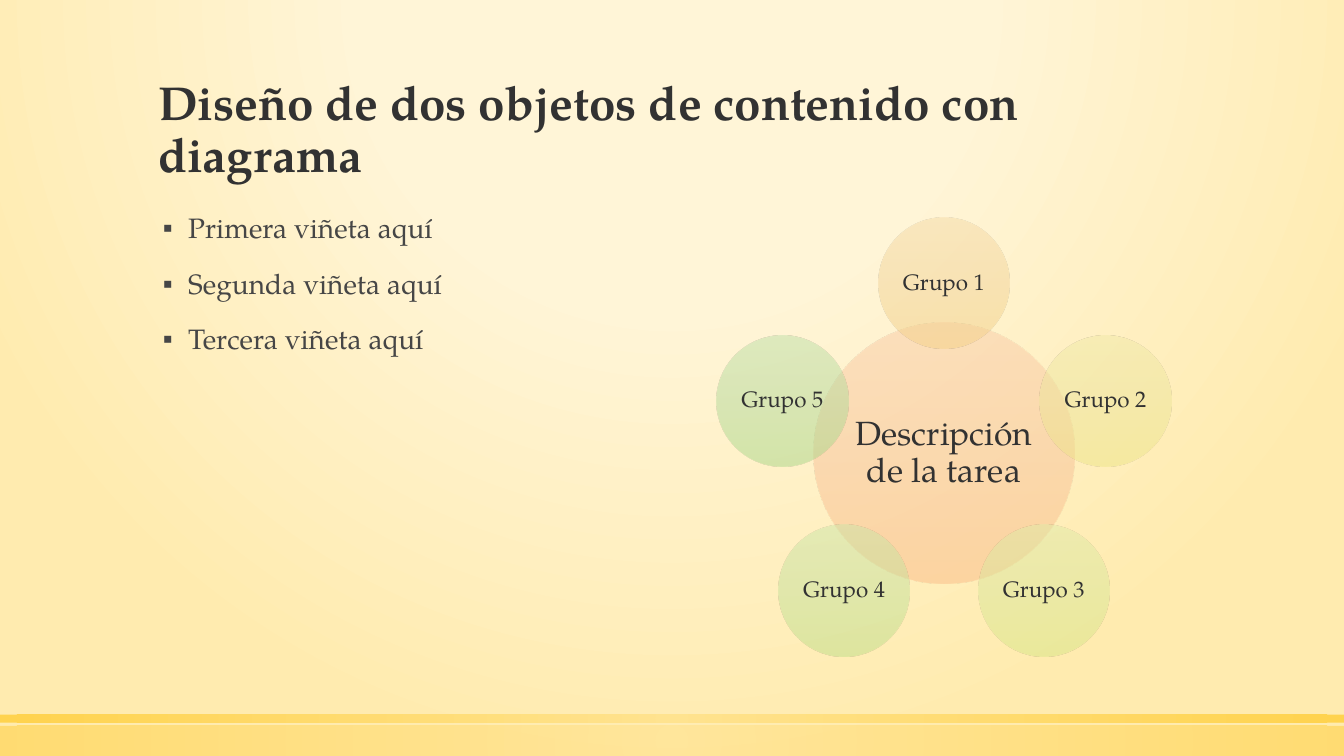
import math
from dataclasses import dataclass

from lxml import etree
from pptx import Presentation
from pptx.dml.color import RGBColor
from pptx.enum import shapes, text
from pptx.oxml import ns
from pptx.util import Cm, Pt

FONT = "TeX Gyre Pagella"
DARK = RGBColor(0x32, 0x32, 0x32)
GREY = RGBColor(0x46, 0x46, 0x46)
CREAM = RGBColor(0xFF, 0xF5, 0xD7)
SAND = RGBColor(0xFF, 0xEB, 0xAF)
YELLOW = RGBColor(0xFF, 0xE1, 0x86)
GOLD = RGBColor(0xFF, 0xCD, 0x36)

SLIDE_W, SLIDE_H = 33.87, 19.05
CENTER_X, CENTER_Y = 23.79, 11.42
ORBIT = 4.28
HUB_SIZE, GROUP_SIZE = 6.58, 3.3


@dataclass
class Stop:
    pos: int
    color: RGBColor
    alpha: int = 100


@dataclass
class Bar:
    top: float
    height: float
    alpha: int


@dataclass
class Circle:
    label: str
    colors: tuple[str, str, str]


BARS = [Bar(18.29, 0.76, 50), Bar(18.01, 0.2, 80)]
HUB = Circle("Descripción de la tarea", ("FACDA9", "F8C39A", "FBBB87"))
GROUPS = [
    Circle("Grupo 1", ("F6DBA8", "F3D49A", "F5D187")),
    Circle("Grupo 2", ("F1EAA8", "EDE59A", "EEE587")),
    Circle("Grupo 3", ("E0EBA8", "DAE79A", "D8E787")),
    Circle("Grupo 4", ("CDE6A8", "C5E19A", "BEE088")),
    Circle("Grupo 5", ("BFE0A9", "B4DA9B", "A9D889")),
]
BULLETS = ["Primera viñeta aquí", "Segunda viñeta aquí", "Tercera viñeta aquí"]


def add_xml(parent, tag: str, **attrs):
    items = {k: str(v) for k, v in attrs.items()}
    return etree.SubElement(parent, ns.qn(tag), items)


def set_gradient(props, stops: list[Stop], focus: tuple | None = None) -> None:
    """Swap the solid fill for a vertical gradient, or a circular one around focus."""
    solid = props.find(ns.qn("a:solidFill"))
    grad = etree.Element(ns.qn("a:gradFill"), rotWithShape="1")
    stop_list = add_xml(grad, "a:gsLst")
    for stop in stops:
        gs = add_xml(stop_list, "a:gs", pos=stop.pos * 1000)
        color = add_xml(gs, "a:srgbClr", val=stop.color)
        if stop.alpha < 100:
            add_xml(color, "a:alpha", val=stop.alpha * 1000)
    if focus:
        path = add_xml(grad, "a:path", path="circle")
        sides = {k: v * 1000 for k, v in zip("ltrb", focus)}
        add_xml(path, "a:fillToRect", **sides)
    else:
        add_xml(grad, "a:lin", ang=5400000, scaled=0)
    props.replace(solid, grad)


def add_plain(s, kind, left: float, top: float, width: float, height: float):
    sp = s.shapes.add_shape(kind, Cm(left), Cm(top), Cm(width), Cm(height))
    sp.shadow.inherit = False
    sp.line.fill.background()
    sp.fill.solid()
    return sp


def format_paragraph(p, size: int, color: RGBColor, align) -> None:
    p.alignment = align
    p.line_spacing = 0.9
    p.font.name = FONT
    p.font.size = Pt(size)
    p.font.color.rgb = color


def place(sp, left: float, top: float, width: float, height: float, anchor):
    sp.left, sp.top, sp.width, sp.height = Cm(left), Cm(top), Cm(width), Cm(height)
    tf = sp.text_frame
    tf.word_wrap = True
    tf.auto_size = text.MSO_AUTO_SIZE.NONE
    tf.vertical_anchor = anchor
    return tf


def add_circle(s, circle: Circle, x: float, y: float, size: float,
               font_size: int, inset: float) -> None:
    sp = add_plain(s, shapes.MSO_SHAPE.OVAL, x - size / 2, y - size / 2, size, size)
    stops = [Stop(pos, RGBColor.from_string(c), 50)
             for pos, c in zip((0, 50, 100), circle.colors)]
    set_gradient(sp._element.spPr, stops)
    tf = sp.text_frame
    tf.word_wrap = True
    tf.vertical_anchor = text.MSO_ANCHOR.MIDDLE
    tf.margin_left = tf.margin_right = tf.margin_top = tf.margin_bottom = Cm(inset)
    p = tf.paragraphs[0]
    p.text = circle.label
    format_paragraph(p, font_size, DARK, text.PP_ALIGN.CENTER)


def main() -> None:
    prs = Presentation()
    prs.slide_width, prs.slide_height = Cm(SLIDE_W), Cm(SLIDE_H)
    s = prs.slides.add_slide(prs.slide_layouts[1])

    # Background
    s.background.fill.solid()
    set_gradient(s._element.find(".//" + ns.qn("p:bgPr")),
                 [Stop(0, CREAM, 59), Stop(40, CREAM, 66), Stop(100, SAND)],
                 (50, -80, 50, 180))

    # Bars along the bottom edge
    for bar in BARS:
        sp = add_plain(s, shapes.MSO_SHAPE.RECTANGLE, 0, bar.top, SLIDE_W, bar.height)
        set_gradient(sp._element.spPr,
                     [Stop(0, YELLOW, bar.alpha), Stop(100, GOLD, bar.alpha)],
                     (50, 50, 50, 50))

    # Title
    tf = place(s.shapes.title, 3.73, 1.3, 26.42, 3.43, text.MSO_ANCHOR.BOTTOM)
    p = tf.paragraphs[0]
    p.text = "Diseño de dos objetos de contenido con diagrama"
    format_paragraph(p, 34, DARK, text.PP_ALIGN.LEFT)
    p.font.bold = True

    # Bullet list
    tf = place(s.placeholders[1], 3.73, 5.28, 12.7, 11.46, text.MSO_ANCHOR.TOP)
    for i, bullet in enumerate(BULLETS):
        p = tf.add_paragraph() if i else tf.paragraphs[0]
        p.text = bullet
        pPr = p._p.get_or_add_pPr()
        pPr.set("marL", str(Cm(0.76)))
        pPr.set("indent", str(Cm(-0.64)))
        add_xml(pPr, "a:buChar", char="▪")
        format_paragraph(p, 20, GREY, text.PP_ALIGN.LEFT)
        p.space_before = Pt(18 if i else 0)

    # Hub with groups evenly spaced around it, clockwise from the top
    add_circle(s, HUB, CENTER_X, CENTER_Y, HUB_SIZE, 24, 0.08)
    for i, group in enumerate(GROUPS):
        angle = math.tau * i / len(GROUPS)
        add_circle(s, group, CENTER_X + ORBIT * math.sin(angle),
                   CENTER_Y - ORBIT * math.cos(angle), GROUP_SIZE, 16, 0.05)

    prs.save("out.pptx")


if __name__ == "__main__":
    main()
